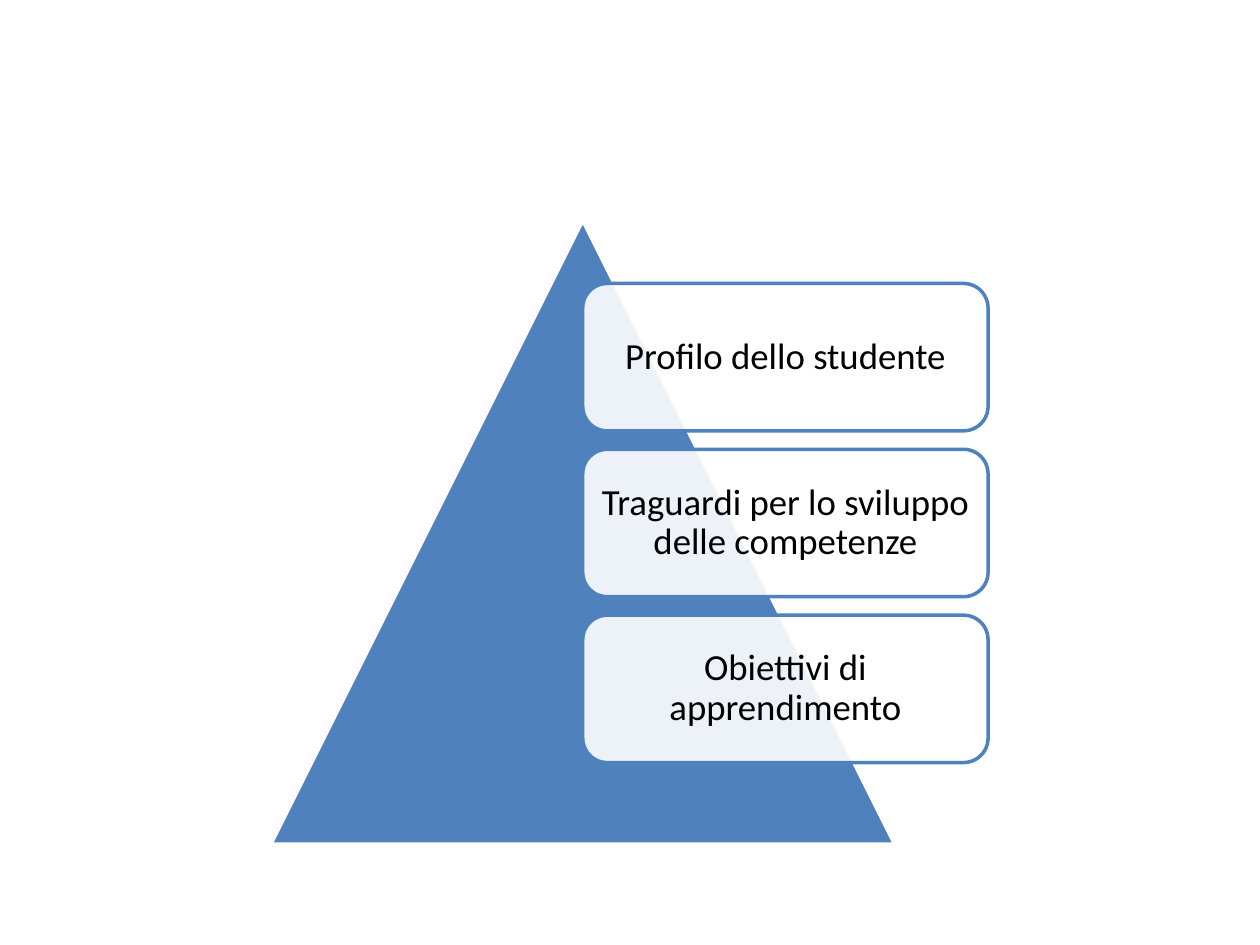
from dataclasses import dataclass

from lxml import etree
from pptx import Presentation
from pptx import util as u
from pptx.dml.color import RGBColor
from pptx.enum import shapes, text
from pptx.oxml.ns import qn


@dataclass(frozen=True)
class Theme:
    blue: str = "4F81BD"
    white: str = "FFFFFF"
    black: str = "000000"
    font: str = "Calibri"
    size: float = 21
    line: float = 2
    alpha: int = 90


THEME = Theme()
WIDE, HIGH = 10, 7.5
SIDE = 4.95
LEFT, TOP = 2.15, 1.75
CARD_W, CARD_H = SIDE * 0.65, 1.17
CARD_X, CARD_Y = LEFT + SIDE / 2, 2.25
STEP = CARD_H * 1.125
LEVELS = (
    "Profilo dello studente",
    "Traguardi per lo sviluppo delle competenze",
    "Obiettivi di apprendimento",
)


def assign(item, values):
    for name, value in values.items():
        setattr(item, name, value)


def add_form(slide, kind, box, fill, line):
    form = slide.shapes.add_shape(kind, *(u.Inches(n) for n in box))
    form.shadow.inherit = False
    form.fill.solid()
    form.fill.fore_color.rgb = RGBColor.from_string(fill)
    form.line.color.rgb = RGBColor.from_string(line)
    form.line.width = u.Pt(THEME.line)
    return form


def fade(form, share):
    color = form._element.spPr.find(qn("a:solidFill"))[0]
    etree.SubElement(color, qn("a:alpha")).set("val", str(share * 1000))


def add_card(slide, row, label):
    box = (CARD_X, CARD_Y + row * STEP, CARD_W, CARD_H)
    card = add_form(slide, shapes.MSO_SHAPE.ROUNDED_RECTANGLE, box,
                    THEME.white, THEME.blue)
    fade(card, THEME.alpha)
    frame = card.text_frame
    assign(frame, {
        "word_wrap": True,
        "vertical_anchor": text.MSO_ANCHOR.MIDDLE,
        **{f"margin_{side}": u.Inches(0.09)
           for side in ("left", "top", "right", "bottom")},
    })
    para = frame.paragraphs[0]
    assign(para, {"alignment": text.PP_ALIGN.CENTER, "line_spacing": 0.9})
    run = para.add_run()
    run.text = label
    assign(run.font, {"name": THEME.font, "size": u.Pt(THEME.size)})
    run.font.color.rgb = RGBColor.from_string(THEME.black)


def main():
    deck = Presentation()
    assign(deck, {"slide_width": u.Inches(WIDE),
                  "slide_height": u.Inches(HIGH)})
    slide = deck.slides.add_slide(deck.slide_layouts[6])
    add_form(slide, shapes.MSO_SHAPE.ISOSCELES_TRIANGLE,
             (LEFT, TOP, SIDE, SIDE), THEME.blue, THEME.white)
    for row, label in enumerate(LEVELS):
        add_card(slide, row, label)
    deck.save("out.pptx")


if __name__ == "__main__":
    main()
